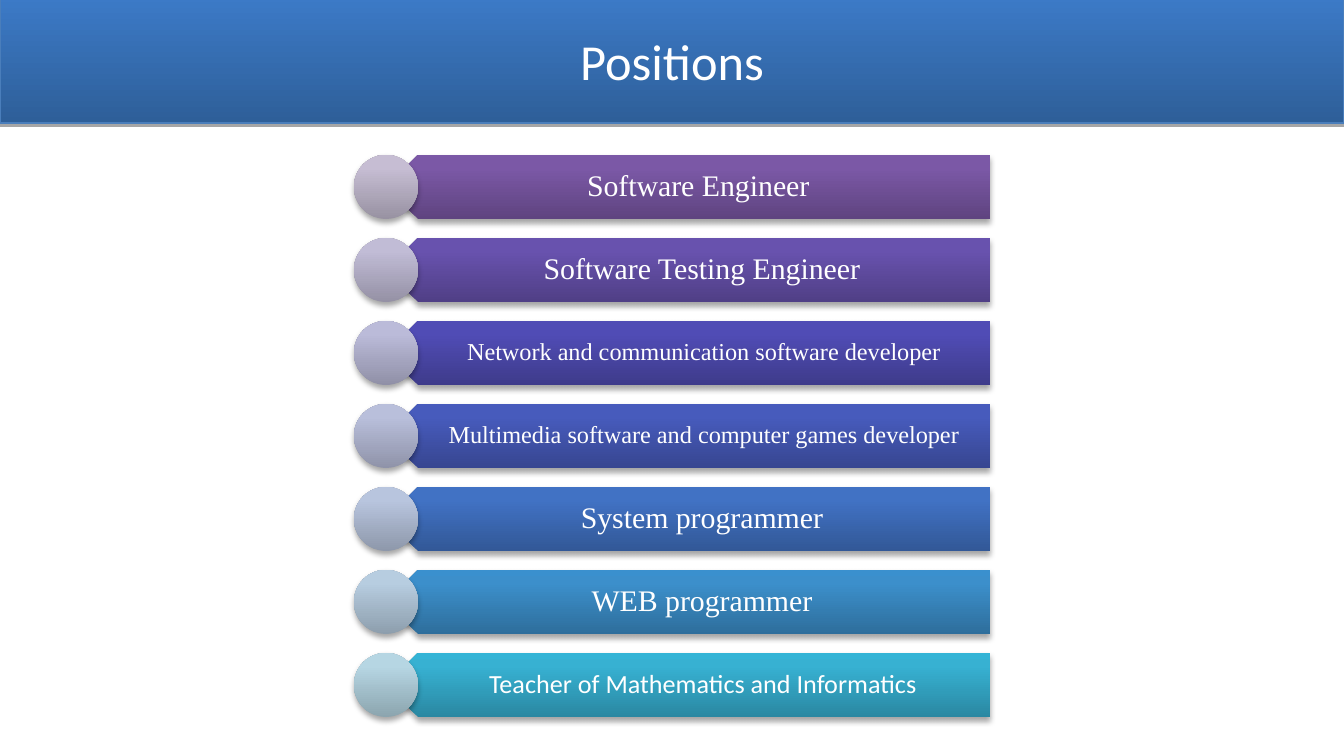
from lxml import etree
from pptx import Presentation
from pptx import util as u
from pptx.dml.color import RGBColor
from pptx.enum import shapes, text
from pptx.oxml.ns import nsdecls

PX = 914400 / 134.4  # EMU per px


def draw(parent, kind, box, colors, line=None, blur=3.1):
    """Add a shape with a bottom-to-top gradient and a soft shadow below."""
    sp = parent.add_shape(kind, *[u.Emu(round(v * PX)) for v in box])
    sp.shadow.inherit = False
    sp.fill.background()
    if line:
        sp.line.color.rgb = RGBColor.from_string(line)
        sp.line.width = u.Pt(0.75)
    else:
        sp.line.fill.background()
    positions = (0, 80, 100) if len(colors) == 3 else (0, 100)
    stops = "".join(
        f'<a:gs pos="{pos * 1000}"><a:srgbClr val="{c}"/></a:gs>'
        for pos, c in zip(positions, colors))
    pr = sp._element.spPr
    pr.replace(pr.find("{*}noFill"), etree.fromstring(
        f'<a:gradFill {nsdecls("a")} rotWithShape="0"><a:gsLst>{stops}</a:gsLst>'
        '<a:lin ang="16200000" scaled="0"/></a:gradFill>'))
    pr.find("{*}effectLst").append(etree.fromstring(
        f'<a:outerShdw {nsdecls("a")} blurRad="{u.Pt(blur)}" dist="{u.Pt(1.8)}" '
        'dir="5400000" rotWithShape="0"><a:srgbClr val="000000">'
        '<a:alpha val="35000"/></a:srgbClr></a:outerShdw>'))
    return sp


def write(sp, words, size, font, margins, color="FFFFFF", spacing=None, after=None):
    """Put one centred line of text into a shape."""
    tf = sp.text_frame
    tf.word_wrap = True
    tf.vertical_anchor = text.MSO_ANCHOR.MIDDLE
    tf.margin_left, tf.margin_top, tf.margin_right, tf.margin_bottom = [
        u.Emu(round(v * PX)) for v in margins]
    p = tf.paragraphs[0]
    p.alignment = text.PP_ALIGN.CENTER
    p.line_spacing = spacing
    if after:
        p.space_after = u.Pt(after)
    r = p.add_run()
    r.text = words
    r.font.size = u.Pt(size)
    r.font.name = font
    r.font.color.rgb = RGBColor.from_string(color)


prs = Presentation()
prs.slide_width, prs.slide_height = u.Emu(round(1344 * PX)), u.Emu(round(756 * PX))
s = prs.slides.add_slide(prs.slide_layouts[6])

# Positions: label, size, font, bar gradient, circle gradient
SERIF, SANS = "Times New Roman", "Calibri"
positions = [
    ("Software Engineer ", 16, SERIF,
     ("5F4480", "7B58A6", "7C57A8"), ("9892A2", "C6BDD3", "C6BED4")),
    ("Software Testing Engineer", 16, SERIF,
     ("503F86", "6852AE", "6851B0"), ("9591A5", "C1BCD6", "C2BCD7")),
    ("Network and communication software developer", 13, SERIF,
     ("3E3B8B", "504CB5", "4F4BB8"), ("9090A7", "BBBBD9", "BCBBDA")),
    ("Multimedia software and computer games developer", 13, SERIF,
     ("374691", "475BBC", "455ABF"), ("8F93A9", "B9BFDB", "BABFDD")),
    ("System programmer", 16, SERIF,
     ("325897", "4172C4", "3F72C7"), ("8E98AB", "B8C5DE", "B8C6E0")),
    ("WEB programmer", 16, SERIF,
     ("2E6E9C", "3C8FCB", "3A90CE"), ("8D9EAD", "B7CDE0", "B7CEE2")),
    ("Teacher of Mathematics and Informatics", 14, SANS,
     ("2A88A2", "37B1D2", "34B4D6"), ("8CA5AF", "B6D6E3", "B6D8E5")),
]

# List rows: bar, label over it, circle on the left end
TOP, STEP, H = 155, 83, 64
group = s.shapes.add_group_shape()
for i, (label, size, font, bar_colors, circle_colors) in enumerate(positions):
    y = TOP + i * STEP
    bar = draw(group.shapes, shapes.MSO_SHAPE.PENTAGON, (386, y, 604, H), bar_colors)
    bar.rotation = 180
    tb = group.shapes.add_textbox(*[u.Emu(round(v * PX)) for v in (402, y, 588, H)])
    pad = size // 2 + 1
    write(tb, label, size, font, (28, pad, size, pad), spacing=0.9, after=size * 0.35)
    draw(group.shapes, shapes.MSO_SHAPE.OVAL, (354, y, H, H), circle_colors)

# Title band
band = draw(s.shapes, shapes.MSO_SHAPE.RECTANGLE, (0, -3, 1344, 126),
            ("2E5F99", "3C7AC7"), line="4A7EBB", blur=0)
write(band, "Positions", 27, SANS, (9, 5, 9, 5))

prs.save("out.pptx")
